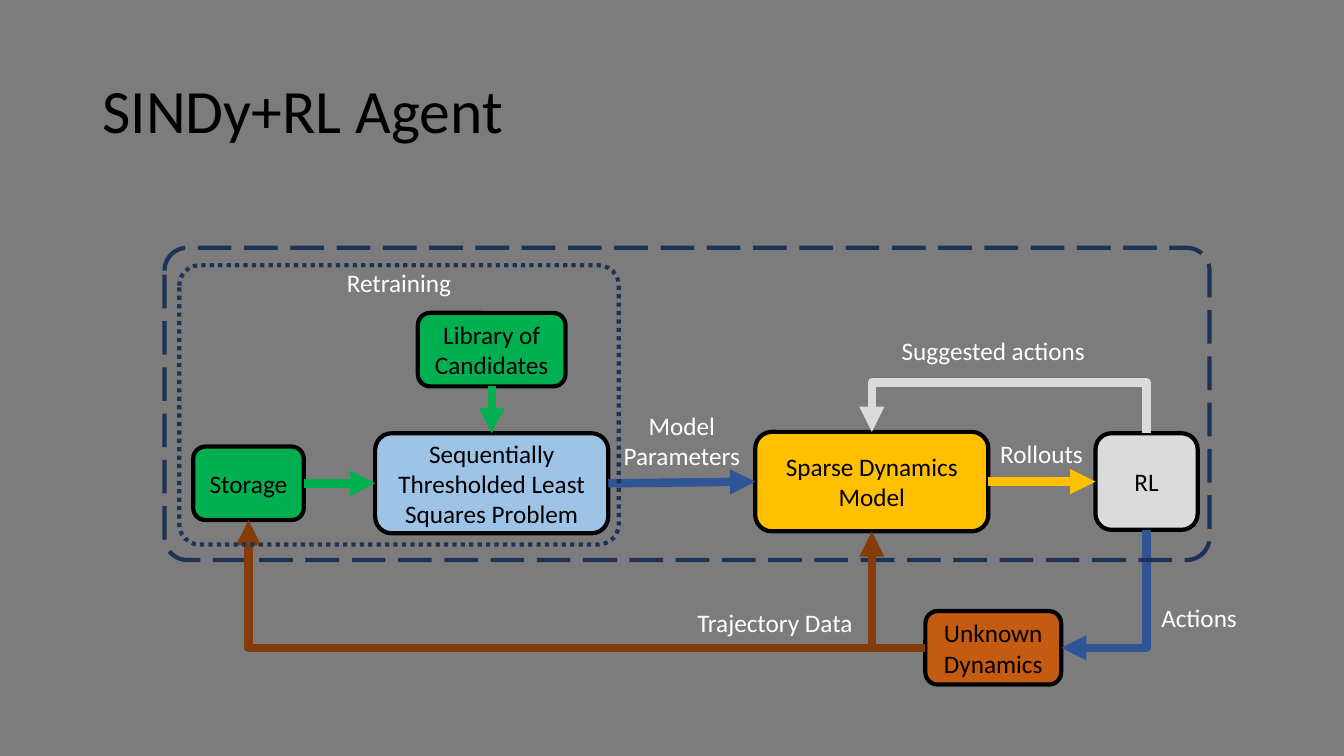
from lxml import etree
from pptx import Presentation
from pptx.dml.color import RGBColor
from pptx.enum import dml, shapes, text
from pptx.oxml.ns import qn
from pptx.util import Pt

COLORS = {
    "background": "7C7C7C", "black": "000000", "white": "FFFFFF",
    "green": "00B050", "sky": "9DC3E6", "yellow": "FFC000",
    "gray": "DBDBDB", "orange": "C55A11", "brown": "843C0B",
    "blue": "2F5597", "navy": "1E3256",
}
FONT = "Calibri"
TOP, LEFT, BOTTOM, RIGHT = range(4)

BLOCKS = {
    "Storage": ("green", 138, 319, 79, 52.5),
    "Library of Candidates": ("green", 298.5, 223.5, 105.5, 52.5),
    "Sequentially Thresholded Least Squares Problem": ("sky", 268, 309.5, 166.5, 71.5),
    "Sparse Dynamics Model": ("yellow", 539.5, 308.5, 166.5, 71),
    "RL": ("gray", 782.5, 309.5, 73, 69),
    "Unknown Dynamics": ("orange", 661, 436.5, 97, 52.5),
}
LABELS = [
    ("Retraining", 240.5, 187.5, 89, 29, False),
    ("Model Parameters", 438, 289.5, 98, 51, True),
    ("Rollouts", 695.5, 309.5, 97, 29, True),
    ("Suggested actions", 634.5, 236, 150, 29, True),
    ("Actions", 819, 427, 75, 29, True),
    ("Trajectory Data", 482.5, 430, 142, 29, True),
]


def rgb(name):
    return RGBColor.from_string(COLORS[name])


def write(frame, words, size, color, align):
    frame.text = words
    paragraph = frame.paragraphs[0]
    paragraph.alignment = align
    font = paragraph.runs[0].font
    font.name, font.size = FONT, Pt(size)
    font.color.rgb = rgb(color)
    return paragraph


def add_title(slide, words):
    title = slide.shapes.title
    title.left, title.top, title.width, title.height = Pt(66), Pt(28.75), Pt(828), Pt(104.5)
    title.text_frame.vertical_anchor = text.MSO_ANCHOR.MIDDLE
    title.text_frame.auto_size = text.MSO_AUTO_SIZE.NONE
    write(title.text_frame, words, 44, "black", text.PP_ALIGN.LEFT).line_spacing = 0.9


def add_rounded(slide, box, outline):
    rounded = slide.shapes.add_shape(shapes.MSO_SHAPE.ROUNDED_RECTANGLE, *map(Pt, box))
    rounded.shadow.inherit = False
    rounded.line.width = Pt(3)
    rounded.line.color.rgb = rgb(outline)
    return rounded


def add_block(slide, words, fill, *box):
    block = add_rounded(slide, box, "black")
    block.fill.solid()
    block.fill.fore_color.rgb = rgb(fill)
    block.text_frame.word_wrap = True
    block.text_frame.vertical_anchor = text.MSO_ANCHOR.MIDDLE
    write(block.text_frame, words, 18, "black", text.PP_ALIGN.CENTER)
    return block


def add_frame(slide, dash, *box):
    frame = add_rounded(slide, box, "navy")
    frame.adjustments[0] = 0.073
    frame.fill.background()
    frame.line.dash_style = dash


def add_label(slide, words, left, top, width, height, wrap):
    label = slide.shapes.add_textbox(Pt(left), Pt(top), Pt(width), Pt(height))
    label.text_frame.word_wrap = wrap
    label.text_frame.auto_size = text.MSO_AUTO_SIZE.SHAPE_TO_FIT_TEXT
    write(label.text_frame, words, 18, "white", text.PP_ALIGN.CENTER)


def add_arrow(slide, color, start, start_side, end, end_side,
              kind=shapes.MSO_CONNECTOR.STRAIGHT):
    arrow = slide.shapes.add_connector(kind, 0, 0, 0, 0)
    arrow.begin_connect(start, start_side)
    arrow.end_connect(end, end_side)
    arrow.line.width = Pt(6)
    arrow.line.color.rgb = rgb(color)
    etree.SubElement(arrow.line._get_or_add_ln(), qn("a:tailEnd"), type="triangle")
    etree.SubElement(arrow._element.spPr, qn("a:effectLst"))
    return arrow


def add_bent_arrow(slide, color, start, start_side, end, end_side,
                   turn, bends=1, flip=False, reach=None):
    arrow = add_arrow(slide, color, start, start_side, end, end_side,
                      shapes.MSO_CONNECTOR.ELBOW)
    center_x = (arrow.begin_x + arrow.end_x) // 2
    center_y = (arrow.begin_y + arrow.end_y) // 2
    width, height = arrow.width, arrow.height
    if turn % 180:
        width, height = height, width
    xfrm = arrow._element.spPr.find(qn("a:xfrm"))
    xfrm.attrib.clear()
    xfrm.set("rot", str(turn * 60000))
    if flip:
        xfrm.set("flipV", "1")
    arrow.left, arrow.top = center_x - width // 2, center_y - height // 2
    arrow.width, arrow.height = width, height
    geometry = arrow._element.spPr.find(qn("a:prstGeom"))
    geometry.set("prst", f"bentConnector{bends + 1}")
    if reach:
        guides = geometry.find(qn("a:avLst"))
        share = round(Pt(reach) / width * 100000)
        etree.SubElement(guides, qn("a:gd"), name="adj1", fmla=f"val {share}")


def main():
    deck = Presentation()
    deck.slide_width, deck.slide_height = Pt(960), Pt(540)
    slide = deck.slides.add_slide(deck.slide_layouts[5])
    slide.background.fill.solid()
    slide.background.fill.fore_color.rgb = rgb("background")
    add_title(slide, "SINDy+RL Agent")

    storage, library, solver, model, agent, dynamics = [
        add_block(slide, words, *look) for words, look in BLOCKS.items()]

    add_arrow(slide, "green", library, BOTTOM, solver, TOP)
    add_arrow(slide, "green", storage, RIGHT, solver, LEFT)
    add_arrow(slide, "blue", solver, RIGHT, model, LEFT)
    add_arrow(slide, "yellow", model, RIGHT, agent, LEFT)
    add_bent_arrow(slide, "gray", agent, TOP, model, TOP, 270, bends=2, flip=True, reach=36.5)
    add_bent_arrow(slide, "blue", agent, BOTTOM, dynamics, RIGHT, 90)
    add_frame(slide, dml.MSO_LINE.LONG_DASH, 117.5, 177, 746.5, 223)
    for target in (storage, model):
        add_bent_arrow(slide, "brown", dynamics, LEFT, target, BOTTOM, 180)
    add_frame(slide, dml.MSO_LINE.ROUND_DOT, 128, 189.5, 314, 199.5)

    for label in LABELS:
        add_label(slide, *label)
    deck.save("out.pptx")


if __name__ == "__main__":
    main()
